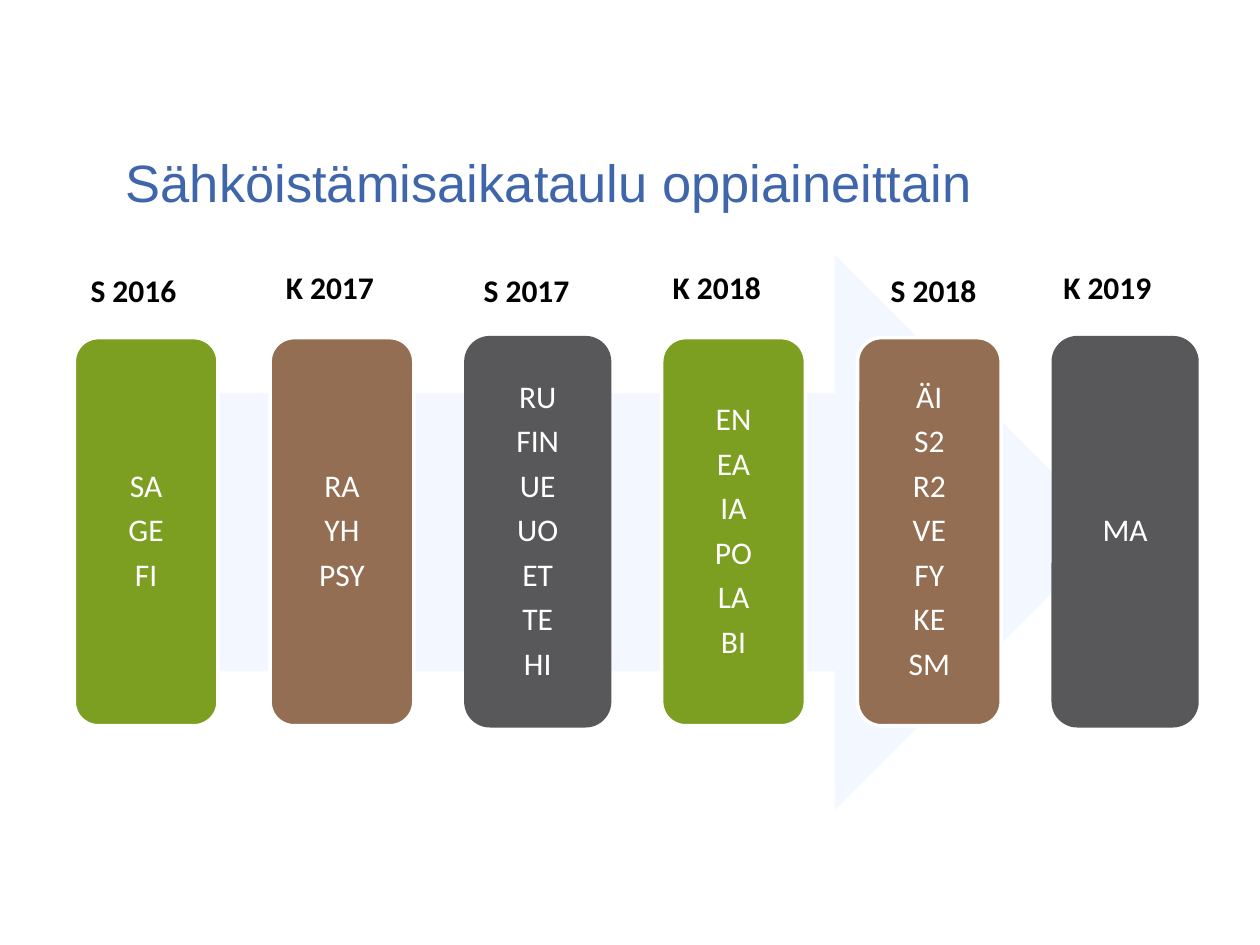
from dataclasses import dataclass

from pptx import Presentation
from pptx.dml.color import RGBColor as RGB
from pptx.enum.shapes import MSO_SHAPE as Shape
from pptx.enum.text import MSO_ANCHOR as Anchor, PP_ALIGN as Align
from pptx.util import Inches, Pt


@dataclass(frozen=True)
class Theme:
    title: RGB = RGB.from_string("3F66AB")
    arrow: RGB = RGB.from_string("F3F7FF")
    green: RGB = RGB.from_string("7C9F21")
    brown: RGB = RGB.from_string("936E52")
    gray: RGB = RGB.from_string("58585A")
    white: RGB = RGB.from_string("FFFFFF")
    black: RGB = RGB.from_string("000000")
    title_font: str = "Arial"
    body_font: str = "Calibri"
    title_size: Pt = Pt(30)
    body_size: Pt = Pt(18)
    subject_gap: Pt = Pt(6)
    outline: Pt = Pt(2)


THEME = Theme()
CARD_LEFT, CARD_STEP = 0.59, 1.554
CARD_STYLES = [
    (THEME.green, THEME.white),
    (THEME.brown, THEME.white),
    (THEME.gray, THEME.gray),
]
TERMS = [
    ("S 2016", 0.62, 2.1, "SA GE FI"),
    ("K 2017", 2.17, 2.08, "RA YH PSY"),
    ("S 2017", 3.74, 2.1, "RU FIN UE UO ET TE HI"),
    ("K 2018", 5.24, 2.08, "EN EA IA PO LA BI"),
    ("S 2018", 6.97, 2.1, "ÄI S2 R2 VE FY KE SM"),
    ("K 2019", 8.34, 2.08, "MA"),
]


def set_font(p, name, size, color, bold=False):
    p.font.name = name
    p.font.size = size
    p.font.color.rgb = color
    p.font.bold = bold


def add_text(s, text, left, top, width, height, anchor=Anchor.TOP):
    box = s.shapes.add_textbox(Inches(left), Inches(top), Inches(width), Inches(height))
    tf = box.text_frame
    tf.word_wrap = True
    tf.vertical_anchor = anchor
    p = tf.paragraphs[0]
    p.text = text
    return p


def add_title(s, text):
    p = add_text(s, text, 0.9, 0.86, 8.58, 1.17, Anchor.MIDDLE)
    set_font(p, THEME.title_font, THEME.title_size, THEME.title)


def add_term_label(s, text, left, top):
    p = add_text(s, text, left, top, 1.18, 0.4)
    set_font(p, THEME.body_font, THEME.body_size, THEME.black, bold=True)


def add_filled(s, kind, left, top, width, height, color):
    sp = s.shapes.add_shape(kind, Inches(left), Inches(top), Inches(width), Inches(height))
    sp.shadow.inherit = False
    sp.fill.solid()
    sp.fill.fore_color.rgb = color
    return sp


def add_arrow(s):
    sp = add_filled(s, Shape.RIGHT_ARROW, 1.26, 2.02, 7.57, 4.41, THEME.arrow)
    sp.line.fill.background()


def add_card(s, left, subjects, fill, line):
    sp = add_filled(s, Shape.ROUNDED_RECTANGLE, left, 2.68, 1.14, 3.08, fill)
    sp.line.color.rgb = line
    sp.line.width = THEME.outline
    tf = sp.text_frame
    tf.word_wrap = True
    tf.vertical_anchor = Anchor.MIDDLE
    tf.margin_left = tf.margin_right = tf.margin_top = tf.margin_bottom = Inches(0.07)
    tf.text = "\n".join(subjects)
    for p in tf.paragraphs:
        p.alignment = Align.CENTER
        p.line_spacing = 0.9
        p.space_after = THEME.subject_gap
        set_font(p, THEME.body_font, THEME.body_size, THEME.white)


def main():
    prs = Presentation()
    prs.slide_width, prs.slide_height = Inches(10), Inches(7.5)
    s = prs.slides.add_slide(prs.slide_layouts[6])
    add_title(s, "Sähköistämisaikataulu oppiaineittain")
    add_arrow(s)
    for i, (term, label_left, label_top, subjects) in enumerate(TERMS):
        fill, line = CARD_STYLES[i % len(CARD_STYLES)]
        add_card(s, CARD_LEFT + i * CARD_STEP, subjects.split(), fill, line)
        add_term_label(s, term, label_left, label_top)
    prs.save("out.pptx")


if __name__ == "__main__":
    main()
